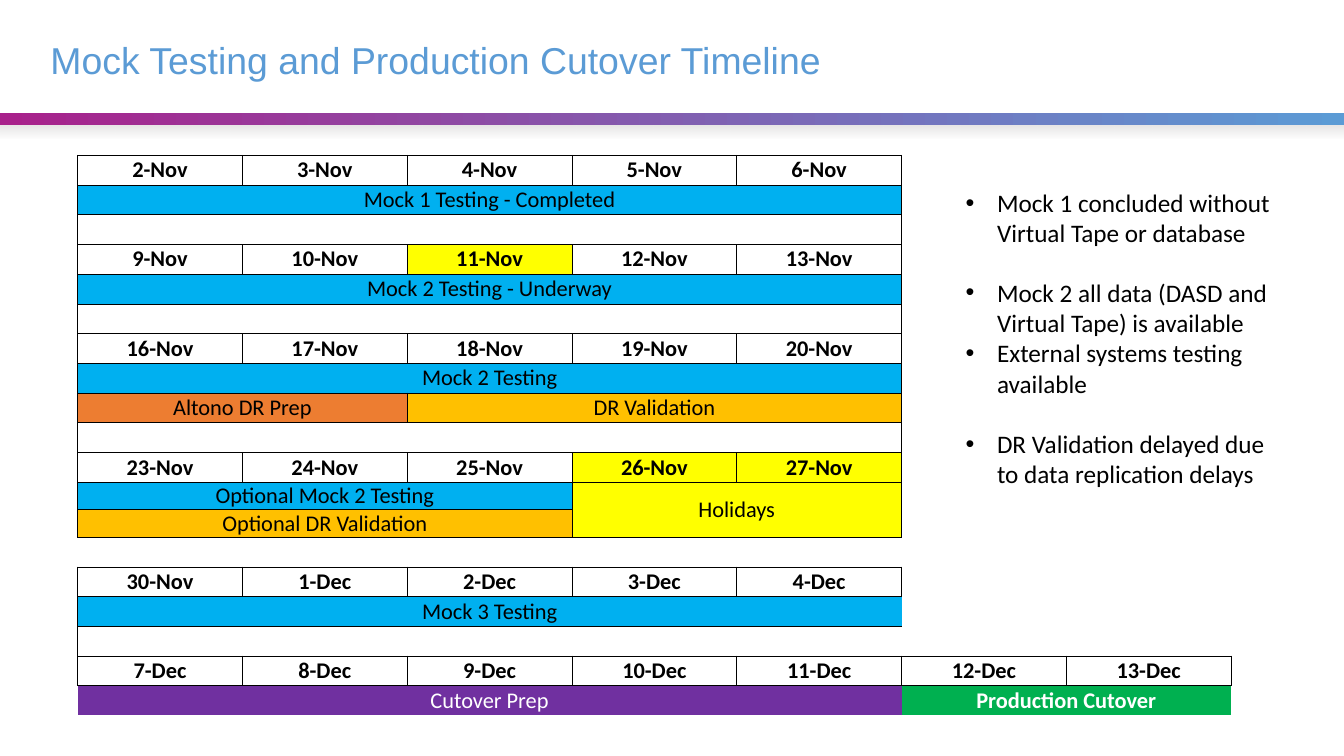
from typing import NamedTuple

from lxml import etree
from pptx import Presentation
from pptx import util as u
from pptx.dml.color import RGBColor
from pptx.enum import shapes, text
from pptx.oxml.ns import qn

BLACK = RGBColor(0x00, 0x00, 0x00)
WHITE = RGBColor(0xFF, 0xFF, 0xFF)
MAGENTA = RGBColor(0xA8, 0x21, 0x8B)
TITLE_BLUE = RGBColor(0x5B, 0x9B, 0xD5)
PALE_GRAY = RGBColor(0xE7, 0xE6, 0xE6)
MOCK_BLUE = RGBColor(0x00, 0xB0, 0xF0)
HOLIDAY_YELLOW = RGBColor(0xFF, 0xFF, 0x00)
PREP_ORANGE = RGBColor(0xED, 0x7D, 0x31)
VALIDATION_GOLD = RGBColor(0xFF, 0xC0, 0x00)
CUTOVER_PURPLE = RGBColor(0x70, 0x30, 0xA0)
PRODUCTION_GREEN = RGBColor(0x00, 0xB0, 0x50)

WORKDAYS = 5
DAYS = 7
ROW_HEIGHT = 118
OPTIONAL_ROW_HEIGHT = 109
OPTIONAL_ROWS = (11, 12)
DAY_WIDTH = 654
NO_STYLE_NO_GRID = "{2D5ABB26-0587-4C30-8999-92F81FD0307C}"
HOLIDAYS = ("11-Nov", "26-Nov", "27-Nov")


class Bar(NamedTuple):
    label: str = ""
    days: int = WORKDAYS
    fill: RGBColor | None = None
    sides: str = "LRTB"
    rows: int = 1
    color: RGBColor = BLACK
    bold: bool = False


def dates(labels):
    return [Bar(label, 1, HOLIDAY_YELLOW if label in HOLIDAYS else None, bold=True)
            for label in labels.split()]


SCHEDULE = [
    dates("2-Nov 3-Nov 4-Nov 5-Nov 6-Nov"),
    [Bar("Mock 1 Testing - Completed", fill=MOCK_BLUE)],
    [Bar()],
    dates("9-Nov 10-Nov 11-Nov 12-Nov 13-Nov"),
    [Bar("Mock 2 Testing - Underway", fill=MOCK_BLUE)],
    [Bar()],
    dates("16-Nov 17-Nov 18-Nov 19-Nov 20-Nov"),
    [Bar("Mock 2 Testing", fill=MOCK_BLUE)],
    [Bar("Altono DR Prep", 2, PREP_ORANGE), Bar("DR Validation", 3, VALIDATION_GOLD)],
    [Bar()],
    dates("23-Nov 24-Nov 25-Nov 26-Nov 27-Nov"),
    [Bar("Optional Mock 2 Testing", 3, MOCK_BLUE),
     Bar("Holidays", 2, HOLIDAY_YELLOW, rows=2)],
    [Bar("Optional DR Validation", 3, VALIDATION_GOLD)],
    [Bar(sides="TB")],
    dates("30-Nov 1-Dec 2-Dec 3-Dec 4-Dec"),
    [Bar("Mock 3 Testing", fill=MOCK_BLUE, sides="LT")],
    [Bar(sides="LB")],
    dates("7-Dec 8-Dec 9-Dec 10-Dec 11-Dec 12-Dec 13-Dec"),
    [Bar("Cutover Prep", fill=CUTOVER_PURPLE, sides="T", color=WHITE),
     Bar("Production Cutover", 2, PRODUCTION_GREEN, "T", color=WHITE, bold=True)],
]

NOTES = [
    (724, 284, ["Mock 1 concluded without Virtual Tape or database"]),
    (1080, 524, ["Mock 2 all data (DASD and Virtual Tape) is available",
                 "External systems testing available"]),
    (1680, 284, ["DR Validation delayed due to data replication delays"]),
]


def assign(target, values):
    for name, value in values.items():
        setattr(target, name, value)


class TimelineSlide:
    EMU_PER_PX = 2286
    NO_MARGINS = dict(margin_left=0, margin_right=0, margin_top=0, margin_bottom=0)

    def __init__(self, presentation):
        assign(presentation, dict(slide_width=self.px(5333), slide_height=self.px(3000)))
        self.slide = presentation.slides.add_slide(presentation.slide_layouts[5])

    def px(self, length):
        return u.Emu(length * self.EMU_PER_PX)

    def font(self, target, size, color=BLACK, name="Calibri", bold=False):
        assign(target.font, dict(name=name, size=u.Pt(size), bold=bold))
        target.font.color.rgb = color

    def title(self, label, left, top, width, height):
        title = self.slide.shapes.title
        assign(title, dict(left=self.px(left), top=self.px(top),
                           width=self.px(width), height=self.px(height)))
        assign(title.text_frame, dict(
            self.NO_MARGINS, text=label, word_wrap=True,
            auto_size=text.MSO_AUTO_SIZE.NONE, vertical_anchor=text.MSO_ANCHOR.MIDDLE))
        paragraph = title.text_frame.paragraphs[0]
        assign(paragraph, dict(alignment=text.PP_ALIGN.LEFT, line_spacing=u.Pt(26.7)))
        self.font(paragraph.runs[0], 26.7, TITLE_BLUE, "Arial")

    def gradient_band(self, top, height, colors, angle, fade=False):
        band = self.slide.shapes.add_shape(
            shapes.MSO_SHAPE.RECTANGLE, 0, self.px(top), self.px(5333), self.px(height))
        band.shadow.inherit = False
        band.line.fill.background()
        band.fill.gradient()
        band.fill.gradient_angle = angle
        for stop, color, position in zip(band.fill.gradient_stops, colors, (0, 1)):
            stop.color.rgb = color
            stop.position = position
        if fade:
            last_color = band._element.findall(".//" + qn("a:srgbClr"))[-1]
            etree.SubElement(last_color, qn("a:alpha"), val="0")

    def notes(self, lines, left, top, width, height):
        box = self.slide.shapes.add_textbox(
            self.px(left), self.px(top), self.px(width), self.px(height))
        assign(box.text_frame, dict(text="\n".join(lines), word_wrap=True,
                                    auto_size=text.MSO_AUTO_SIZE.SHAPE_TO_FIT_TEXT))
        indent = self.px(125)
        for paragraph in box.text_frame.paragraphs:
            properties = paragraph._p.get_or_add_pPr()
            properties.set("marL", str(indent))
            properties.set("indent", str(-indent))
            etree.SubElement(properties, qn("a:buFont"), typeface="Arial")
            etree.SubElement(properties, qn("a:buChar"), char="•")
            self.font(paragraph.runs[0], 18)

    def cell(self, cell, sides, cleared=""):
        assign(cell, dict(self.NO_MARGINS, vertical_anchor=text.MSO_ANCHOR.MIDDLE))
        properties = cell._tc.get_or_add_tcPr()
        for side in "LRTB":
            if side in sides:
                border = etree.SubElement(properties, qn("a:ln" + side), w=str(u.Pt(0.5)))
                fill = etree.SubElement(border, qn("a:solidFill"))
                etree.SubElement(fill, qn("a:srgbClr"), val=str(BLACK))
            elif side in cleared:
                border = etree.SubElement(properties, qn("a:ln" + side))
                etree.SubElement(border, qn("a:noFill"))
        paragraph = cell.text_frame.paragraphs[0]
        etree.SubElement(paragraph._p, qn("a:endParaRPr"), sz="1600")

    def bar(self, table, row, column, bar):
        last_row, last_column = row + bar.rows - 1, column + bar.days - 1
        for r in range(row, last_row + 1):
            for c in range(column, last_column + 1):
                outer = dict(L=c == column, R=c == last_column, T=r == row, B=r == last_row)
                self.cell(table.cell(r, c), [side for side in bar.sides if outer[side]])
        cell = table.cell(row, column)
        if bar.days > 1 or bar.rows > 1:
            cell.merge(table.cell(last_row, last_column))
        if bar.fill is None:
            cell.fill.background()
        else:
            cell.fill.solid()
            cell.fill.fore_color.rgb = bar.fill
        if bar.label:
            paragraph = cell.text_frame.paragraphs[0]
            paragraph.alignment = text.PP_ALIGN.CENTER
            run = paragraph.add_run()
            run.text = bar.label
            self.font(run, 16, bar.color, bold=bar.bold)

    def schedule(self, schedule, left, top):
        heights = [OPTIONAL_ROW_HEIGHT if row in OPTIONAL_ROWS else ROW_HEIGHT
                   for row in range(len(schedule))]
        frame = self.slide.shapes.add_table(
            len(schedule), DAYS, self.px(left), self.px(top),
            self.px(DAY_WIDTH * DAYS), self.px(sum(heights)))
        table = frame.table
        assign(table, dict(first_row=False, horz_banding=False))
        table._tbl.find(".//" + qn("a:tableStyleId")).text = NO_STYLE_NO_GRID
        for column in table.columns:
            column.width = self.px(DAY_WIDTH)
        for row, (bars, height) in enumerate(zip(schedule, heights)):
            table.rows[row].height = self.px(height)
            column = 0
            for bar in bars:
                self.bar(table, row, column, bar)
                column += bar.days
            for weekend in range(max(column, WORKDAYS), DAYS):
                closes_week = weekend == WORKDAYS and "R" in bars[-1].sides
                above_dates = sum(bar.days for bar in schedule[row + 1]) == DAYS
                sides = "L" * closes_week + "B" * above_dates
                self.cell(table.cell(row, weekend), sides, cleared="LRTB")


def main():
    presentation = Presentation()
    timeline = TimelineSlide(presentation)
    timeline.gradient_band(448, 50, (MAGENTA, TITLE_BLUE), 0)
    timeline.gradient_band(498, 52, (PALE_GRAY, PALE_GRAY), 270, fade=True)
    timeline.title("Mock Testing and Production Cutover Timeline", 200, 100, 4932, 300)
    timeline.schedule(SCHEDULE, 308, 616)
    for top, height, lines in NOTES:
        timeline.notes(lines, 3792, top, 1344, height)
    presentation.save("out.pptx")


if __name__ == "__main__":
    main()
